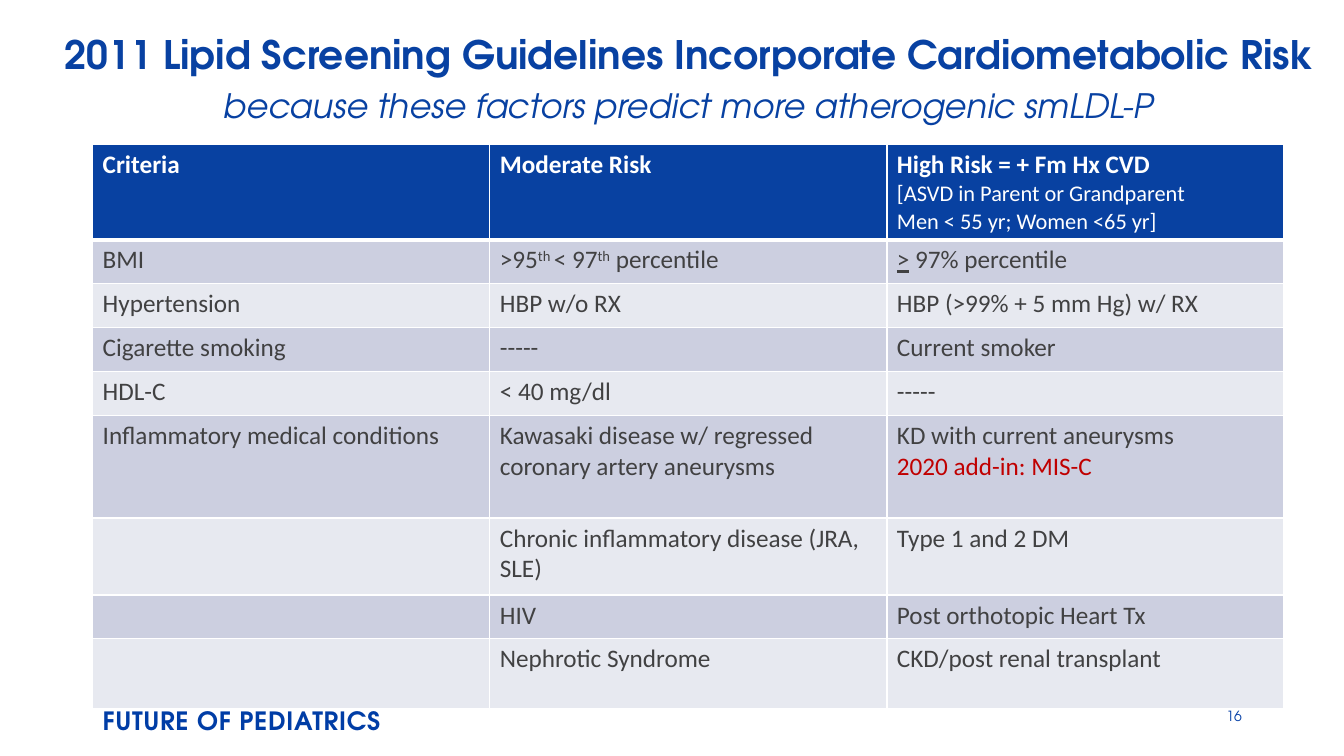
from lxml.etree import SubElement
from pptx import Presentation
from pptx.dml.color import RGBColor
from pptx.enum.text import MSO_ANCHOR, PP_ALIGN
from pptx.oxml.ns import qn
from pptx.util import Pt

BLUE = RGBColor(0x08, 0x41, 0xA2)
FOOTER_BLUE = RGBColor(0x00, 0x3D, 0xA6)
HEADER_FILL = RGBColor(0x08, 0x41, 0xA1)
BANDS = (RGBColor(0xCC, 0xCF, 0xE0), RGBColor(0xE7, 0xE9, 0xF0))
WHITE = RGBColor(0xFF, 0xFF, 0xFF)
GREY = RGBColor(0x41, 0x41, 0x42)
RED = RGBColor(0xC0, 0x00, 0x00)
HEADING_FONT = "TeX Gyre Adventor"
TABLE_FONT = "Calibri"

HEADER = (
    ["Criteria"],
    ["Moderate Risk"],
    ["High Risk = + Fm Hx CVD", "[ASVD in Parent or Grandparent", "Men < 55 yr; Women <65 yr]"],
)
PERCENTILES = [(">95", {}), ("th ", {"baseline": "30000"}), ("< 97", {}),
               ("th", {"baseline": "30000"}), (" percentile", {})]
HIGH_BMI = [(">", {"u": "sng"}), (" 97% percentile", {})]
CRITERIA = (
    ("BMI", [PERCENTILES], [HIGH_BMI], 31.4),
    ("Hypertension", "HBP w/o RX", "HBP (>99% + 5 mm Hg) w/ RX", 31.4),
    ("Cigarette smoking", "-----", "Current smoker", 31.4),
    ("HDL-C", "< 40 mg/dl", "-----", 31.4),
    ("Inflammatory medical conditions",
     "Kawasaki disease w/ regressed coronary artery aneurysms",
     ["KD with current aneurysms", "2020 add-in: MIS-C"], 73.1),
    ("", "Chronic inflammatory disease (JRA, SLE)", "Type 1 and 2 DM", 55),
    ("", "HIV", "Post orthotopic Heart Tx", 31.4),
    ("", "Nephrotic Syndrome", "CKD/post renal transplant", 50),
)
HEADER_HEIGHT = 68.2


def add_run(paragraph, words, size, color, font=TABLE_FONT, bold=False, italic=False):
    """Add one styled run and return it."""
    run = paragraph.add_run()
    run.text = words
    run.font.name = font
    run.font.size = Pt(size)
    run.font.color.rgb = color
    run.font.bold = bold
    run.font.italic = italic
    return run


def add_text_area(slide, left, top, width, height, anchor):
    """Add a wrapping text box and return its first paragraph."""
    frame = slide.shapes.add_textbox(Pt(left), Pt(top), Pt(width), Pt(height)).text_frame
    frame.word_wrap = True
    frame.vertical_anchor = anchor
    return frame.paragraphs[0]


def add_heading(slide, left, top, width, height):
    """Place the two-line heading."""
    heading = add_text_area(slide, left, top, width, height, MSO_ANCHOR.MIDDLE)
    heading.alignment = PP_ALIGN.CENTER
    heading.line_spacing = 1.2
    add_run(heading, "2011 Lipid Screening Guidelines Incorporate Cardiometabolic Risk",
            28, BLUE, HEADING_FONT, bold=True)
    heading.add_line_break()
    add_run(heading, "because these factors predict more atherogenic smLDL-P",
            24, BLUE, HEADING_FONT, italic=True)


def style_cell(cell, fill, top_width=1, bottom_width=1):
    """Give a cell white borders and a solid fill."""
    properties = cell._tc.get_or_add_tcPr()
    for side, width in (("L", 1), ("R", 1), ("T", top_width), ("B", bottom_width)):
        border = SubElement(properties, qn(f"a:ln{side}"), w=str(Pt(width)))
        solid = SubElement(border, qn("a:solidFill"))
        SubElement(solid, qn("a:srgbClr"), val=str(WHITE))
    cell.fill.solid()
    cell.fill.fore_color.rgb = fill


def cell_paragraphs(cell, lines):
    """Yield a paragraph of the cell for each line."""
    frame = cell.text_frame
    for index, line in enumerate(lines):
        yield index, line, frame.add_paragraph() if index else frame.paragraphs[0]


def fill_header(cell, lines):
    """Write a column heading with its smaller explanation."""
    style_cell(cell, HEADER_FILL, bottom_width=3)
    for index, line, paragraph in cell_paragraphs(cell, lines):
        add_run(paragraph, line, 16 if index else 18, WHITE, bold=index == 0)


def fill_criterion(cell, content, row):
    """Write a body cell, marking any added second line in red."""
    style_cell(cell, BANDS[(row - 1) % 2], top_width=3 if row == 1 else 1)
    lines = [content] if isinstance(content, str) else content
    for index, line, paragraph in cell_paragraphs(cell, lines):
        pieces = [(line, {})] if isinstance(line, str) else line
        for words, attributes in pieces:
            if words:
                run = add_run(paragraph, words, 18, RED if index else GREY)
                for name, value in attributes.items():
                    run.font._element.set(name, value)


def add_risk_table(slide, left, top, width):
    """Place the table of risk criteria."""
    heights = [HEADER_HEIGHT] + [criterion[-1] for criterion in CRITERIA]
    table = slide.shapes.add_table(len(heights), len(HEADER), Pt(left), Pt(top),
                                   Pt(width), Pt(sum(heights))).table
    for column in table.columns:
        column.width = Pt(width / len(HEADER))
    for row, height in zip(table.rows, heights):
        row.height = Pt(height)
    for column, lines in enumerate(HEADER):
        fill_header(table.cell(0, column), lines)
    for row, criterion in enumerate(CRITERIA, 1):
        for column, content in enumerate(criterion[:-1]):
            fill_criterion(table.cell(row, column), content, row)


def add_footer(slide, left, top, width, height):
    """Place the programme name and the page number."""
    part = 216
    programme = add_text_area(slide, left, top + 3.6, part, height, MSO_ANCHOR.TOP)
    run = add_run(programme, "FUTURE OF PEDIATRICS", 18, FOOTER_BLUE, HEADING_FONT, bold=True)
    run.font._element.set("spc", "50")
    page = add_text_area(slide, left + width - part, top, part, height, MSO_ANCHOR.MIDDLE)
    page.alignment = PP_ALIGN.RIGHT
    add_run(page, "16", 10, FOOTER_BLUE, HEADING_FONT)


def main():
    """Build and save the slide."""
    deck = Presentation()
    deck.slide_width, deck.slide_height = Pt(960), Pt(540)
    slide = deck.slides.add_slide(deck.slide_layouts[6])
    add_footer(slide, 66.2, 496.8, 828, 28.8)
    add_heading(slide, 20.9, 0, 941.8, 104.4)
    add_risk_table(slide, 66.2, 103.2, 851)
    deck.save("out.pptx")


if __name__ == "__main__":
    main()
